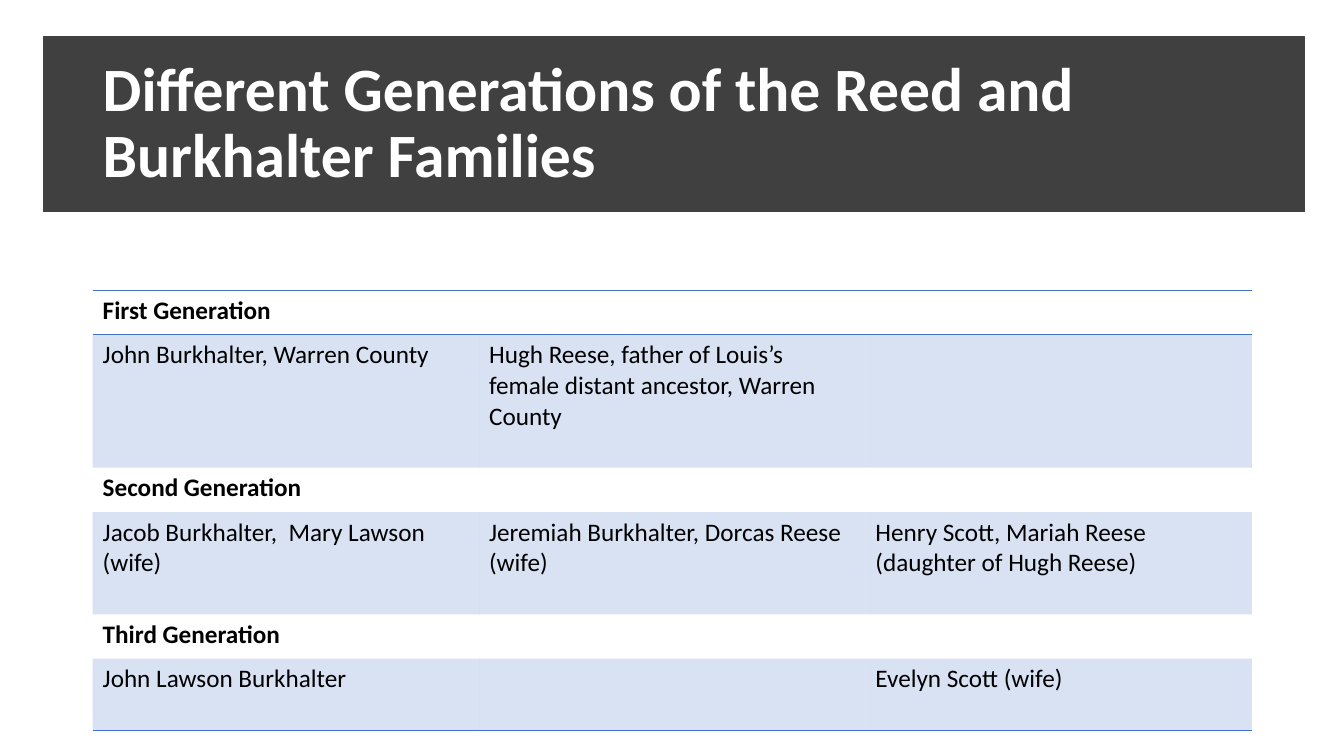
from lxml.etree import SubElement
from pptx import Presentation
from pptx.dml.color import RGBColor as RGB
from pptx.enum.shapes import MSO_SHAPE as SHAPE
from pptx.enum.text import MSO_ANCHOR as ANCHOR, MSO_AUTO_SIZE as AUTO, PP_ALIGN as ALIGN
from pptx.oxml import parse_xml
from pptx.oxml.ns import nsdecls, qn
from pptx.util import Pt

COLORS = {"band": "404040", "title": "FFFFFF", "text": "000000", "accent": "4472C4"}
NO_STYLE = "{2D5ABB26-0587-4C30-8999-92F81FD0307C}"

# Each generation: heading, people, height of the people row
GENERATIONS = [
    ("First Generation",
     ["John Burkhalter, Warren County",
      "Hugh Reese, father of Louis’s female distant ancestor, Warren County", ""], 95),
    ("Second Generation",
     ["Jacob Burkhalter,  Mary Lawson (wife)",
      "Jeremiah Burkhalter, Dorcas Reese (wife)",
      "Henry Scott, Mariah Reese (daughter of Hugh Reese)"], 73),
    ("Third Generation", ["John Lawson Burkhalter", "", "Evelyn Scott (wife)"], 51.4),
]
HEADING_HEIGHT = 31.7


class Deck:
    def __init__(self, width, height, font):
        self.prs = Presentation()
        self.prs.slide_width, self.prs.slide_height = Pt(width), Pt(height)
        self.slide = self.prs.slides.add_slide(self.prs.slide_layouts[5])
        self.font = font

    def style(self, paragraph, size, color, bold):
        font = paragraph.font
        font.name, font.size, font.bold = self.font, Pt(size), bold
        font.color.rgb = RGB.from_string(COLORS[color])

    def title(self, text, left, top, width, height):
        title = self.slide.shapes.title
        title.left, title.top, title.width, title.height = map(Pt, (left, top, width, height))
        frame = title.text_frame
        frame.text = text
        frame.word_wrap, frame.auto_size = True, AUTO.NONE
        frame.vertical_anchor = ANCHOR.MIDDLE
        heading = frame.paragraphs[0]
        heading.alignment, heading.line_spacing = ALIGN.LEFT, 0.9
        self.style(heading, 44, "title", True)

    def band(self, left, top, width, height):
        band = self.slide.shapes.add_shape(SHAPE.RECTANGLE, *map(Pt, (left, top, width, height)))
        band.shadow.inherit = False
        color = RGB.from_string(COLORS["band"])
        band.fill.solid()
        band.fill.fore_color.rgb = band.line.color.rgb = color
        band.line.width = Pt(1)
        # The band lies behind the title
        self.slide.shapes.title._element.addprevious(band._element)

    def tint(self, cell, percent):
        cell.fill.solid()
        cell.fill.fore_color.rgb = RGB.from_string(COLORS["accent"])
        color = cell._tc.tcPr.find(qn("a:solidFill"))[0]
        SubElement(color, qn("a:alpha")).set("val", str(percent * 1000))

    def borders(self, cell, sides):
        for position, side in enumerate(sides):
            cell._tc.get_or_add_tcPr().insert(position, parse_xml(
                f'<a:ln{side} {nsdecls("a")} w="{Pt(1)}"><a:solidFill>'
                f'<a:srgbClr val="{COLORS["accent"]}"/></a:solidFill></a:ln{side}>'))

    def table(self, rows, left, top, width):
        """Rows are (texts, height, is_heading)."""
        total = sum(height for _, height, _ in rows)
        columns = len(rows[0][0])
        frame = self.slide.shapes.add_table(
            len(rows), columns, *map(Pt, (left, top, width, total)))
        table = frame.table
        table.first_row = table.horz_banding = False
        table._tbl.tblPr.find(qn("a:tableStyleId")).text = NO_STYLE
        for column in table.columns:
            column.width = Pt(width / columns)
        for r, (texts, height, is_heading) in enumerate(rows):
            table.rows[r].height = Pt(height)
            for cell, text in zip(table.rows[r].cells, texts):
                cell.text = text
                self.style(cell.text_frame.paragraphs[0], 18, "text", is_heading)
                if is_heading:
                    cell.fill.background()
                else:
                    self.tint(cell, 20)
                # Rules around the first row and under the last
                self.borders(cell, {0: "TB", len(rows) - 1: "B"}.get(r, ""))


def main():
    deck = Deck(960, 540, "Calibri")

    # Heading
    deck.band(31, 26.6, 900.7, 124.6)
    deck.title("Different Generations of the Reed and Burkhalter Families",
               66.2, 36.7, 828, 104.4)

    # Generations table
    rows = []
    for heading, people, height in GENERATIONS:
        rows += [([heading, "", ""], HEADING_HEIGHT, True), (people, height, False)]
    deck.table(rows, 66.2, 207.4, 828)

    deck.prs.save("out.pptx")


if __name__ == "__main__":
    main()
